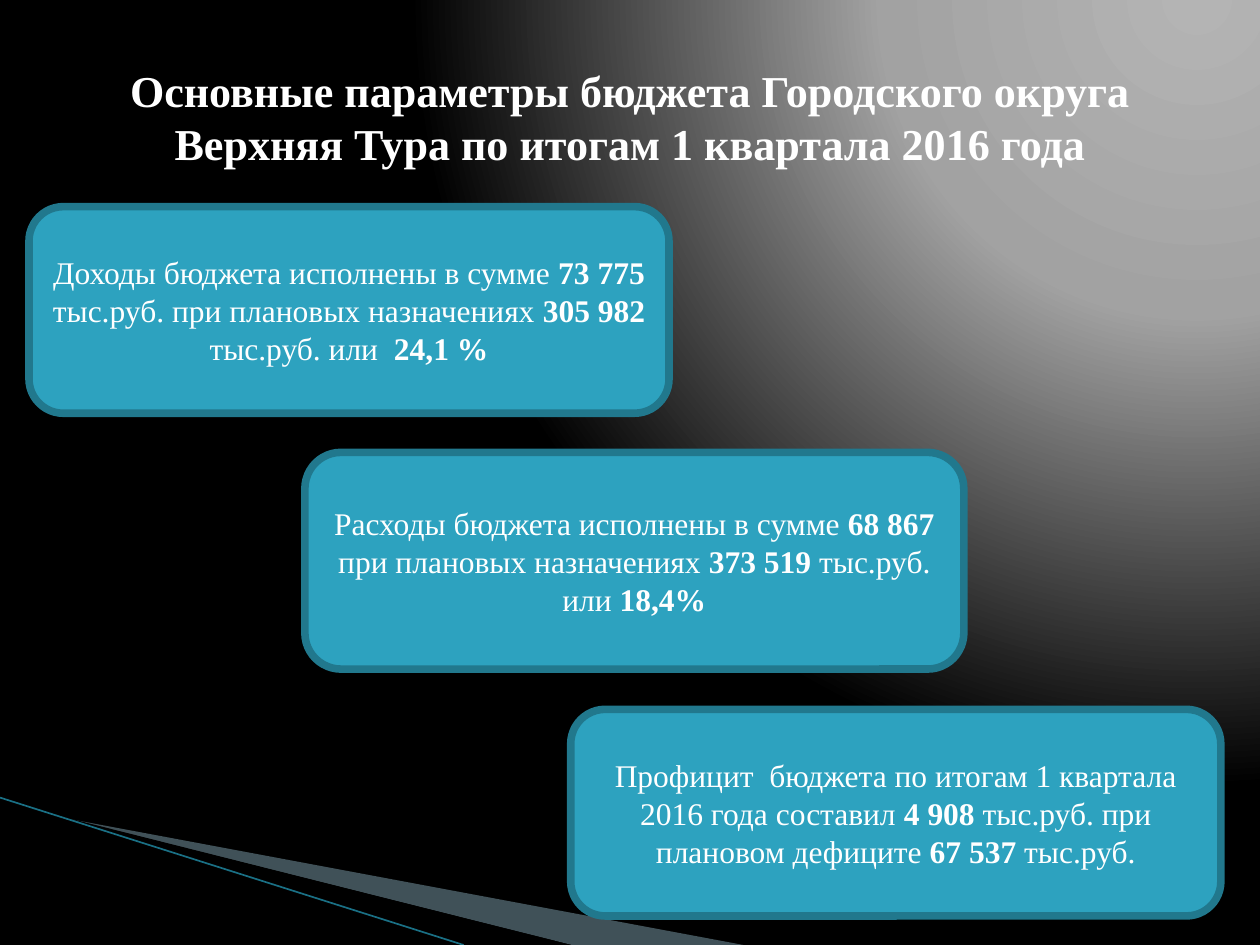
from dataclasses import dataclass

from lxml import etree
from pptx import Presentation
from pptx.dml.color import RGBColor
from pptx.enum.shapes import MSO_CONNECTOR, MSO_SHAPE
from pptx.enum.text import MSO_ANCHOR, PP_ALIGN
from pptx.oxml import parse_xml
from pptx.oxml.ns import nsdecls, qn
from pptx.util import Inches, Pt

ROUNDED = MSO_SHAPE.ROUNDED_RECTANGLE
STRAIGHT = MSO_CONNECTOR.STRAIGHT
CENTER = PP_ALIGN.CENTER
MIDDLE = MSO_ANCHOR.MIDDLE
FONT = "Times New Roman"
WHITE, BLACK, TEAL, DARK_TEAL = "FFFFFF", "000000", "2DA2BF", "21788D"
WEDGE, RAY = "A0CBDC", "1A7085"


@dataclass
class Card:
    left: float
    top: float
    width: float
    height: float
    texts: list[str]  # plain and bold pieces in turn


CARDS = [
    Card(0.23, 1.64, 5.08, 1.64, [
        "Доходы бюджета исполнены в сумме ", "73 775 ",
        "тыс.руб. при плановых назначениях ", "305 982 ",
        "тыс.руб. или  ", "24,1 %"]),
    Card(2.42, 3.59, 5.23, 1.72, [
        "Расходы бюджета исполнены в сумме ", "68 867 ",
        "при плановых назначениях ", "373 519 ",
        "тыс.руб. или ", "18,4%"]),
    Card(4.53, 5.63, 5.16, 1.64, [
        "Профицит  бюджета по итогам 1 квартала 2016 года составил ", "4 908 ",
        "тыс.руб. при плановом дефиците ", "67 537 ",
        "тыс.руб."]),
]


def rgb(color: str) -> RGBColor:
    return RGBColor.from_string(color)


def add_run(p, text: str, size: float, bold: bool) -> None:
    r = p.add_run()
    r.text = text
    for name, value in {"name": FONT, "size": Pt(size), "bold": bold}.items():
        setattr(r.font, name, value)
    r.font.color.rgb = rgb(WHITE)


def set_background(s) -> None:
    stops = "".join(
        f'<a:gs pos="{pos * 1000}"><a:srgbClr val="{color}"/></a:gs>'
        for pos, color in [(0, "B4B4B4"), (40, "A2A2A2"), (100, BLACK)])
    gradient = parse_xml(
        f'<a:gradFill {nsdecls("a")} rotWithShape="1"><a:gsLst>{stops}</a:gsLst>'
        '<a:path path="circle"><a:fillToRect l="95000" t="-106000" r="5000" b="206000"/>'
        '</a:path></a:gradFill>')
    fill = s.background.fill
    fill.solid()
    fill.fore_color.rgb = rgb(BLACK)
    solid = s._element.find(f'.//{qn("p:bgPr")}/{qn("a:solidFill")}')
    solid.getparent().replace(solid, gradient)


def add_wedge(s, points: list[tuple[float, float]], color: str, alpha: int = 100) -> None:
    corners = [(Inches(x), Inches(y)) for x, y in points]
    builder = s.shapes.build_freeform(*corners[0])
    builder.add_line_segments(corners[1:], close=True)
    sp = builder.convert_to_shape()
    sp.shadow.inherit = False
    sp.fill.solid()
    sp.fill.fore_color.rgb = rgb(color)
    sp.line.fill.background()
    if alpha < 100:
        clr = sp._element.spPr.find(f'{qn("a:solidFill")}/{qn("a:srgbClr")}')
        etree.SubElement(clr, qn("a:alpha"), val=str(alpha * 1000))


def add_ray(s) -> None:
    line = s.shapes.add_connector(
        STRAIGHT, Inches(0), Inches(6.33), Inches(3.68), Inches(7.5))
    line.line.color.rgb = rgb(RAY)
    line.line.width = Pt(0.95)
    etree.SubElement(line._element.spPr, qn("a:effectLst"))


def add_card(s, card: Card) -> None:
    sp = s.shapes.add_shape(ROUNDED, Inches(card.left), Inches(card.top),
                            Inches(card.width), Inches(card.height))
    sp.shadow.inherit = False
    sp.fill.solid()
    sp.fill.fore_color.rgb = rgb(TEAL)
    sp.line.color.rgb = rgb(DARK_TEAL)
    sp.line.width = Pt(4.33)
    tf = sp.text_frame
    tf.word_wrap = True
    tf.vertical_anchor = MIDDLE
    p = tf.paragraphs[0]
    p.alignment = CENTER
    for i, text in enumerate(card.texts):
        add_run(p, text, 18, bold=i % 2 == 1)


def set_title(s, text: str) -> None:
    title = s.shapes.title
    box = {"left": 0.5, "top": 0.3, "width": 9, "height": 1.25}
    for name, value in box.items():
        setattr(title, name, Inches(value))
    tf = title.text_frame
    tf.word_wrap = True
    tf.vertical_anchor = MIDDLE
    p = tf.paragraphs[0]
    p.alignment = CENTER
    add_run(p, text, 25.2, bold=True)


def main() -> None:
    prs = Presentation()
    prs.slide_width, prs.slide_height = Inches(10), Inches(7.5)
    s = prs.slides.add_slide(prs.slide_layouts[5])
    set_background(s)

    # Corner decoration
    add_wedge(s, [(0.55, 6.5), (5.9, 7.5), (4.54, 7.5)], WEDGE, alpha=40)
    add_wedge(s, [(0.53, 6.49), (4.53, 7.5), (3.68, 7.5)], BLACK)
    add_ray(s)

    # Title and budget figures
    set_title(s, "Основные параметры бюджета Городского округа "
                 "Верхняя Тура по итогам 1 квартала 2016 года")
    for card in CARDS:
        add_card(s, card)

    prs.save("out.pptx")


if __name__ == "__main__":
    main()
